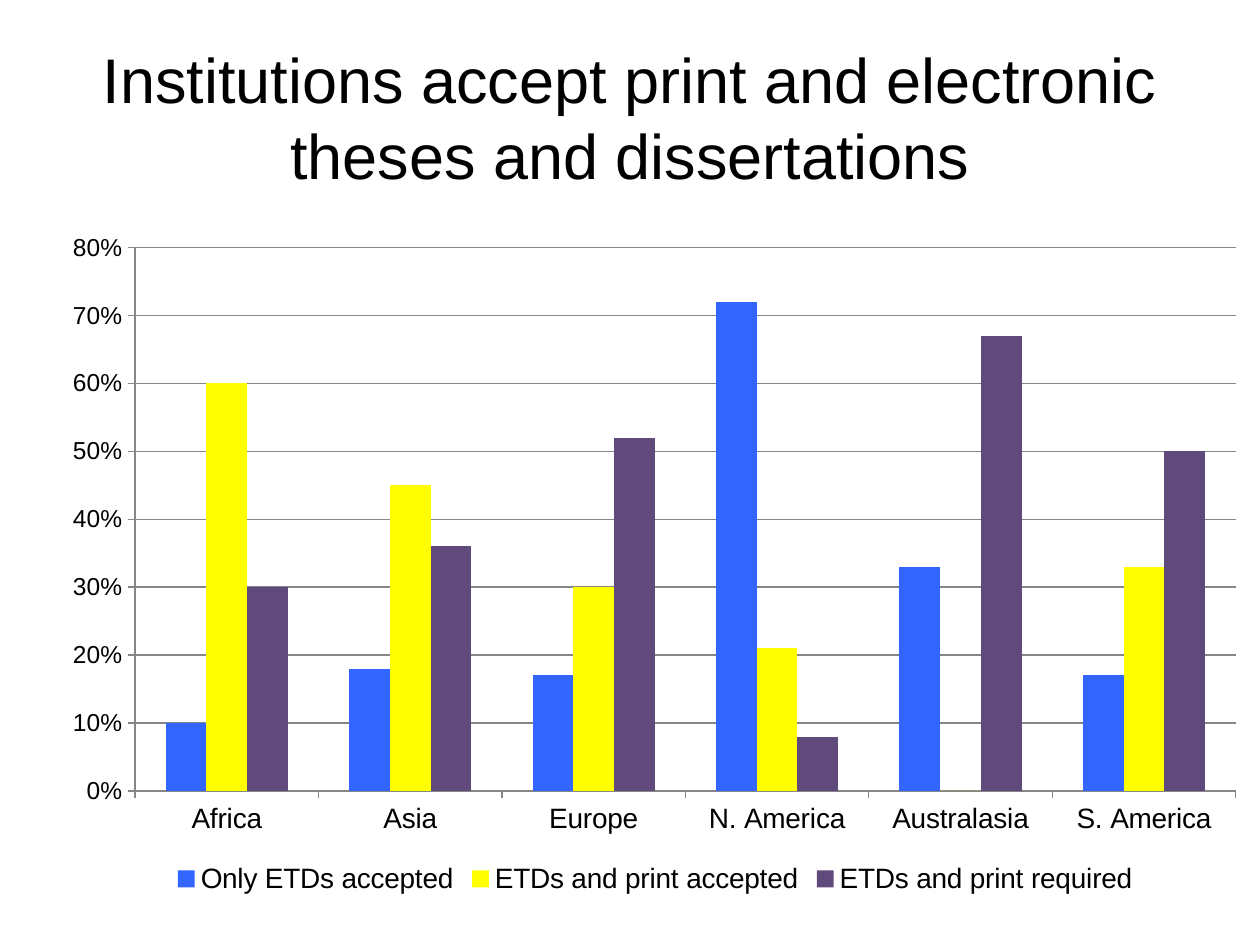
import pptx
import pptx.chart.data
import pptx.dml.color
import pptx.enum.chart
import pptx.enum.text
import pptx.oxml
import pptx.oxml.ns
import pptx.util
from dataclasses import dataclass

Inches = pptx.util.Inches


@dataclass(frozen=True)
class Theme:
    font: str = "Arial"
    ink: str = "000000"
    grid: str = "868686"
    bars: tuple = ("3366FF", "FFFF00", "604A7B")
    head: int = 36
    body: int = 16
    small: int = 14


def color(code):
    return pptx.dml.color.RGBColor.from_string(code)


def apply(item, style):
    for name, value in style.items():
        setattr(item, name, value)


class Deck:
    def __init__(self, theme):
        self.theme = theme
        self.file = pptx.Presentation()
        apply(self.file, {"slide_width": Inches(10), "slide_height": Inches(7.5)})
        self.slide = self.file.slides.add_slide(self.file.slide_layouts[5])

    def style(self, font, size):
        apply(font, {"name": self.theme.font, "size": pptx.util.Pt(size)})
        font.color.rgb = color(self.theme.ink)

    def line(self, form):
        form.line.color.rgb = color(self.theme.grid)
        form.line.width = pptx.util.Pt(0.75)

    def title(self, text, left, top, width, height):
        shape = self.slide.shapes.title
        apply(shape, {"left": Inches(left), "top": Inches(top),
                      "width": Inches(width), "height": Inches(height)})
        frame = shape.text_frame
        apply(frame, {"text": text, "word_wrap": True,
                      "vertical_anchor": pptx.enum.text.MSO_ANCHOR.MIDDLE})
        para = frame.paragraphs[0]
        para.alignment = pptx.enum.text.PP_ALIGN.CENTER
        self.style(para.runs[0].font, self.theme.head)

    def columns(self, groups, series, box, area):
        data = pptx.chart.data.CategoryChartData(number_format="0%")
        data.categories = groups
        for name, values in series.items():
            data.add_series(name, values)
        kind = pptx.enum.chart.XL_CHART_TYPE.COLUMN_CLUSTERED
        frame = self.slide.shapes.add_chart(kind, *map(Inches, box), data)
        chart = frame.chart
        apply(chart, {"has_title": False, "has_legend": True})
        self.style(chart.font, self.theme.body)

        # Bars
        plot = chart.plots[0]
        apply(plot, {"gap_width": 150, "overlap": 0, "vary_by_categories": False})
        for bar, code in zip(plot.series, self.theme.bars):
            bar.format.fill.solid()
            bar.format.fill.fore_color.rgb = color(code)
            bar.invert_if_negative = False

        # Axes and grid
        tick = pptx.enum.chart.XL_TICK_MARK
        for axis in (chart.category_axis, chart.value_axis):
            apply(axis, {"major_tick_mark": tick.OUTSIDE,
                         "minor_tick_mark": tick.NONE})
            self.line(axis.format)
        axis = chart.value_axis
        apply(axis, {"minimum_scale": 0, "maximum_scale": 0.8,
                     "major_unit": 0.1, "has_major_gridlines": True})
        apply(axis.tick_labels, {"number_format": "0%",
                                 "number_format_is_linked": False})
        self.style(axis.tick_labels.font, self.theme.small)
        self.line(axis.major_gridlines.format)

        # Legend
        apply(chart.legend, {"include_in_layout": False,
                             "position": pptx.enum.chart.XL_LEGEND_POSITION.BOTTOM})
        self.style(chart.legend.font, self.theme.body)
        self.place(chart, area)

    def place(self, chart, area):
        """Fix the inner plot area as shares of the chart frame."""
        plot = chart.element.xpath("c:chart/c:plotArea")[0]
        for old in plot.xpath("c:layout"):
            plot.remove(old)
        parts = [("layoutTarget", "inner"), ("xMode", "edge"), ("yMode", "edge")]
        parts += zip("xywh", area)
        tags = "".join(f'<c:{tag} val="{val}"/>' for tag, val in parts)
        space = pptx.oxml.ns.nsdecls("c")
        plot.insert(0, pptx.oxml.parse_xml(
            f"<c:layout {space}><c:manualLayout>{tags}</c:manualLayout></c:layout>"))


def main():
    deck = Deck(Theme())
    deck.title("Institutions accept print and electronic theses and dissertations",
               0.5, 0.3, 9, 1.25)
    deck.columns(
        ["Africa", "Asia", "Europe", "N. America", "Australasia", "S. America"],
        {"Only ETDs accepted": (0.1, 0.18, 0.17, 0.72, 0.33, 0.17),
         "ETDs and print accepted": (0.6, 0.45, 0.3, 0.21, 0, 0.33),
         "ETDs and print required": (0.3, 0.36, 0.52, 0.08, 0.67, 0.5)},
        box=(0.4, 1.75, 9.6, 5.39), area=(0.07, 0.04, 0.91, 0.8))
    deck.file.save("out.pptx")


if __name__ == "__main__":
    main()
